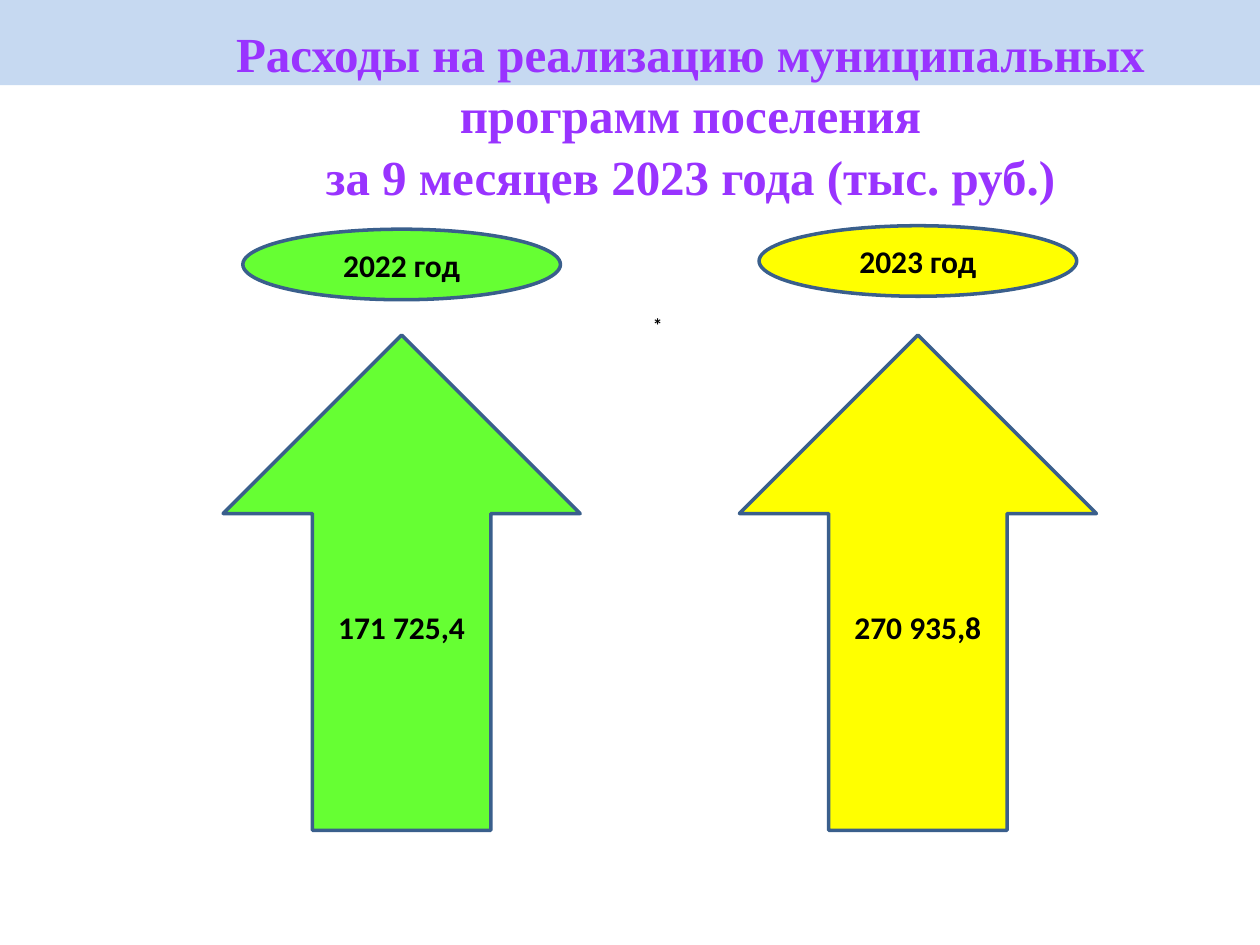
from pptx import Presentation
from pptx.dml.color import RGBColor
from pptx.enum.shapes import MSO_SHAPE
from pptx.enum.text import MSO_ANCHOR, PP_ALIGN
from pptx.util import Pt

COLORS = {
    "band": "C6D9F1",
    "title": "9933FF",
    "outline": "3A5F8C",
    "text": "000000",
    "green": "66FF33",
    "yellow": "FFFF00",
}


class SlideBuilder:
    body_font = "Calibri"
    title_font = "Times New Roman"

    def __init__(self, slide):
        self.slide = slide

    def color(self, name):
        return RGBColor.from_string(COLORS[name])

    def set_text(self, text_frame, text, size, color="text", font=None, spacing=None):
        text_frame.word_wrap = True
        text_frame.text = text
        for paragraph in text_frame.paragraphs:
            paragraph.alignment = PP_ALIGN.CENTER
            if spacing:
                paragraph.line_spacing = spacing
            for run in paragraph.runs:
                run.font.name = font or self.body_font
                run.font.size = Pt(size)
                run.font.bold = True
                run.font.color.rgb = self.color(color)

    def shape(self, kind, box, fill, text=""):
        """Add a filled preset shape, outlined only when it carries text."""
        shape = self.slide.shapes.add_shape(kind, *map(Pt, box))
        shape.shadow.inherit = False
        shape.fill.solid()
        shape.fill.fore_color.rgb = self.color(fill)
        if text:
            shape.line.color.rgb = self.color("outline")
            shape.line.width = Pt(2)
            shape.text_frame.vertical_anchor = MSO_ANCHOR.MIDDLE
            self.set_text(shape.text_frame, text, 18)
        else:
            shape.line.fill.background()

    def text_box(self, box, text, size, **style):
        text_box = self.slide.shapes.add_textbox(*map(Pt, box))
        self.set_text(text_box.text_frame, text, size, **style)


def main():
    presentation = Presentation()
    presentation.slide_width, presentation.slide_height = Pt(720), Pt(540)
    builder = SlideBuilder(presentation.slides.add_slide(presentation.slide_layouts[6]))

    builder.shape(MSO_SHAPE.RECTANGLE, (0, 0, 720, 48.6), "band")
    builder.text_box(
        (82.8, 8, 623.5, 108.7),
        "Расходы на реализацию муниципальных программ поселения\n"
        "за 9 месяцев 2023 года (тыс. руб.)",
        28, color="title", font=builder.title_font, spacing=1.05,
    )

    arrow_width, ellipse_width = 204, 181.5
    years = [
        ("2022 год", "171 725,4", "green", 229.5, 131),
        ("2023 год", "270 935,8", "yellow", 524.5, 129),
    ]
    for year, amount, fill, center, ellipse_top in years:
        builder.shape(MSO_SHAPE.UP_ARROW,
                      (center - arrow_width / 2, 191.5, arrow_width, 283), fill, amount)
        builder.shape(MSO_SHAPE.OVAL,
                      (center - ellipse_width / 2, ellipse_top, ellipse_width, 40.3), fill, year)

    builder.text_box((195.8, 175.7, 360, 20.6), "*", 11)
    presentation.save("out.pptx")


if __name__ == "__main__":
    main()
